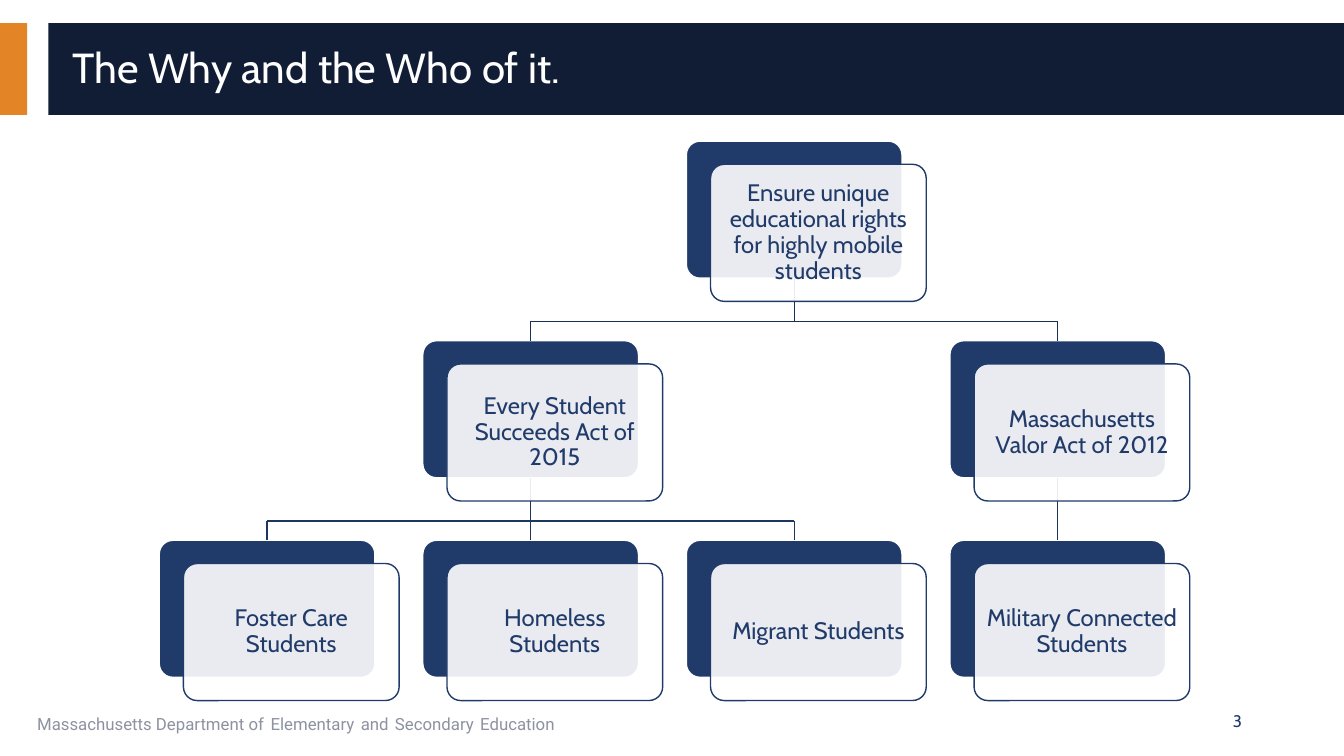
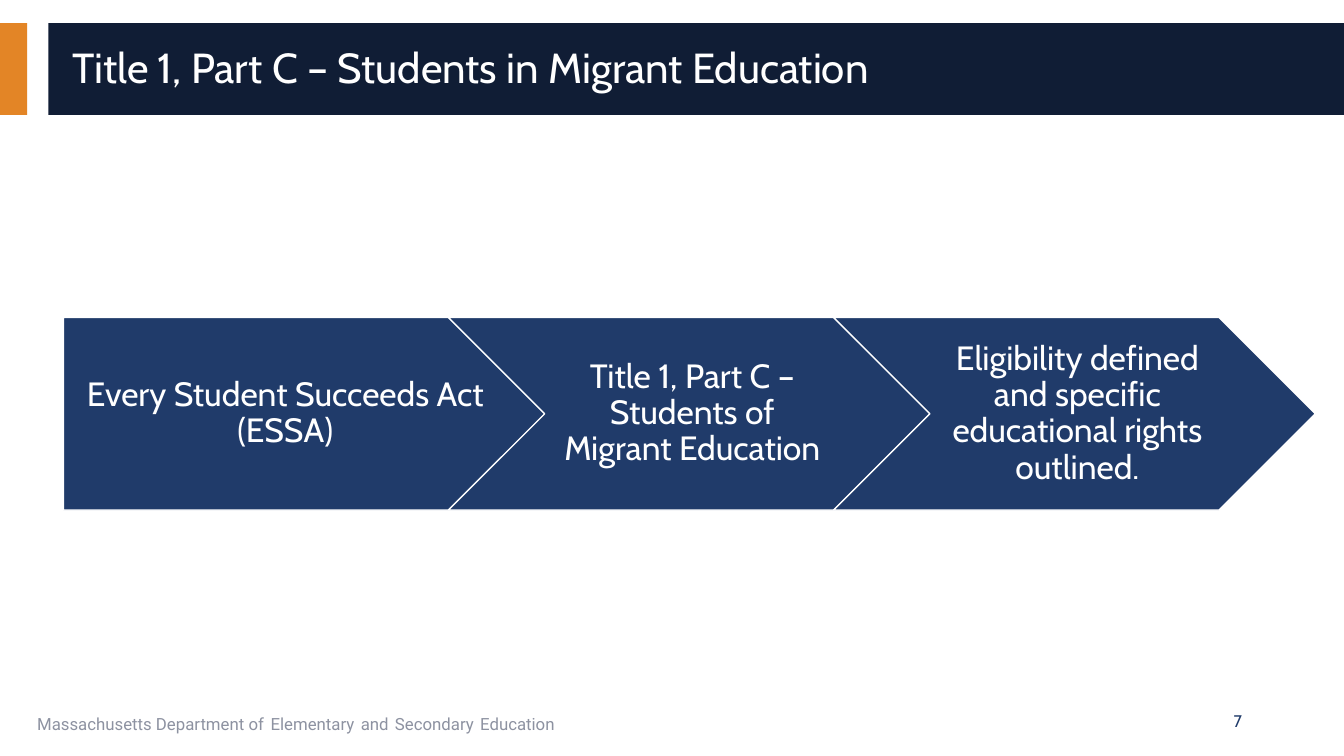
from lxml.etree import SubElement
from pptx import Presentation
from pptx.dml.color import RGBColor
from pptx.enum.shapes import MSO_CONNECTOR as Wire, MSO_SHAPE as Form
from pptx.enum.text import MSO_ANCHOR as Anchor, PP_ALIGN as Align
from pptx.oxml.ns import qn
from pptx.util import Inches, Pt

NAVY = RGBColor(0x20, 0x3B, 0x6A)
DARK = RGBColor(0x10, 0x1D, 0x35)
ORANGE = RGBColor(0xE3, 0x85, 0x26)
GREY = RGBColor(0x8D, 0x92, 0xA1)
WHITE = RGBColor(0xFF, 0xFF, 0xFF)
TRUNK = RGBColor(0x1A, 0x2F, 0x55)
BRANCH = RGBColor(0x1D, 0x36, 0x60)

FOOTER = ["Massachusetts Department of", "Elementary", "and", "Secondary", "Education"]

# Card grid, in percent of the slide's width and height
LEFT, TOP = 11.85, 18.67
STEP_X, STEP_Y = 19.61, 26.4
CARD_W, CARD_H = 16.05, 18.13
SHIFT_X, SHIFT_Y = 1.8, 3.07
BUS_DROP = 5.73

# Name: (column, row, text)
CARDS = {
    "goal": (2, 0, "Ensure unique educational rights for highly mobile students"),
    "essa": (1, 1, "Every Student Succeeds Act of 2015"),
    "valor": (3, 1, "Massachusetts Valor Act of 2012"),
    "foster": (0, 2, "Foster Care Students"),
    "homeless": (1, 2, "Homeless Students"),
    "migrant": (2, 2, "Migrant Students"),
    "military": (3, 2, "Military Connected Students"),
}
TREE = {
    "goal": (["essa", "valor"], TRUNK),
    "essa": (["foster", "homeless", "migrant"], BRANCH),
    "valor": (["military"], BRANCH),
}
STEPS = [
    (Form.PENTAGON, 0.14, "Every Student Succeeds Act (ESSA)"),
    (Form.CHEVRON, 0.1, "Title 1, Part C – Students of Migrant Education"),
    (Form.CHEVRON, 0.1, "Eligibility defined and specific educational rights outlined."),
]


class Deck:
    """Style and current slide; places are percent of the slide's size."""

    def __init__(self):
        self.prs = Presentation()
        self.prs.slide_width = Inches(13.33)
        self.prs.slide_height = Inches(7.5)
        self.slide = None

    def scale(self, x, y):
        return (round(self.prs.slide_width * x / 100),
                round(self.prs.slide_height * y / 100))

    def start(self, title, number):
        """Open a slide with its bands, title, footer and number."""
        self.slide = self.prs.slides.add_slide(self.prs.slide_layouts[6])
        self.shape(Form.RECTANGLE, 0, 3.07, 2.03, 12.13, ORANGE)
        self.shape(Form.RECTANGLE, 3.6, 3.07, 96.4, 12.13, DARK)
        foot = self.box(2.03, 92.67, 63.3, 5.33, Anchor.TOP)
        for i, word in enumerate(FOOTER):
            if i:
                self.run(foot, " ", 18, NAVY, "Roboto")
            self.run(foot, word, 12, GREY, "Roboto")
        head = self.box(4.65, 4.27, 93.3, 9.87)
        head.line_spacing = 0.9
        self.run(head, title, 30, WHITE)
        page = self.box(70.65, 92.67, 22.5, 5.33)
        page.alignment = Align.RIGHT
        self.run(page, str(number), 12, NAVY)

    def run(self, para, text, size, color, face="Cabin"):
        run = para.add_run()
        run.text = text
        run.font.size = Pt(size)
        run.font.name = face
        run.font.color.rgb = color

    def box(self, x, y, w, h, anchor=Anchor.MIDDLE):
        """Add a text box and return its first paragraph."""
        frame = self.slide.shapes.add_textbox(*self.scale(x, y), *self.scale(w, h)).text_frame
        frame.word_wrap = True
        frame.vertical_anchor = anchor
        return frame.paragraphs[0]

    def shape(self, form, x, y, w, h, fill, line=None):
        shape = self.slide.shapes.add_shape(form, *self.scale(x, y), *self.scale(w, h))
        shape.shadow.inherit = False
        shape.fill.solid()
        shape.fill.fore_color.rgb = fill
        if line is None:
            shape.line.fill.background()
        else:
            shape.line.color.rgb = line
            shape.line.width = Pt(1)
        return shape

    def label(self, shape, text, size, color, left=0.07, right=0.07):
        frame = shape.text_frame
        frame.word_wrap = True
        frame.vertical_anchor = Anchor.MIDDLE
        frame.margin_left, frame.margin_right = Inches(left), Inches(right)
        frame.margin_top = frame.margin_bottom = Inches(0.07)
        para = frame.paragraphs[0]
        para.alignment = Align.CENTER
        para.line_spacing = 0.9
        self.run(para, text, size, color)

    def card(self, x, y, fill, line):
        shape = self.shape(Form.ROUNDED_RECTANGLE, x, y, CARD_W, CARD_H, fill, line)
        shape.adjustments[0] = 0.1
        return shape

    def pane(self, x, y, text):
        """Add the translucent front card with its text."""
        shape = self.card(x + SHIFT_X, y + SHIFT_Y, WHITE, NAVY)
        color = shape.fill._xPr.find(qn("a:solidFill"))[0]
        SubElement(color, qn("a:alpha")).set("val", "90000")
        self.label(shape, text, 17, NAVY)

    def wire(self, start, end, color, above=None, below=None):
        """Draw a line, joined to the card above and the card below if given."""
        line = self.slide.shapes.add_connector(
            Wire.STRAIGHT, *self.scale(*start), *self.scale(*end))
        line.line.color.rgb = color
        line.line.width = Pt(1)
        SubElement(line._element.spPr, qn("a:effectLst"))
        if above is not None:
            line.begin_connect(above, 2)
        if below is not None:
            line.end_connect(below, 0)

    def link(self, root, kids, color, spots, backs):
        """Join a card to the cards under it."""
        def mid(name):
            return spots[name][0] + CARD_W / 2

        x, base = mid(root), spots[root][1] + CARD_H
        bus = base + BUS_DROP
        if len(kids) == 1:
            self.wire((x, base), (x, spots[kids[0]][1]), color, backs[root], backs[kids[0]])
            return
        self.wire((x, base), (x, bus), color, above=backs[root])
        self.wire((mid(kids[0]), bus), (mid(kids[-1]), bus), color)
        for kid in kids:
            self.wire((mid(kid), bus), (mid(kid), spots[kid][1]), color, below=backs[kid])

    def tree(self):
        spots = {name: (LEFT + col * STEP_X, TOP + row * STEP_Y)
                 for name, (col, row, _) in CARDS.items()}
        backs = {name: self.card(*spot, NAVY, WHITE) for name, spot in spots.items()}
        for root, (kids, color) in TREE.items():
            self.link(root, kids, color, spots, backs)
        for name, (_, _, text) in CARDS.items():
            self.pane(*spots[name], text)

    def chain(self):
        for i, (form, left, text) in enumerate(STEPS):
            shape = self.shape(form, 4.72 + i * 28.65, 42, 35.85, 25.47, NAVY, WHITE)
            self.label(shape, text, 24, WHITE, left, 0.04)


def main():
    deck = Deck()
    deck.start("The Why and the Who of it.", 3)
    deck.tree()
    deck.start("Title 1, Part C – Students in Migrant Education", 7)
    deck.chain()
    deck.prs.save("out.pptx")


if __name__ == "__main__":
    main()
